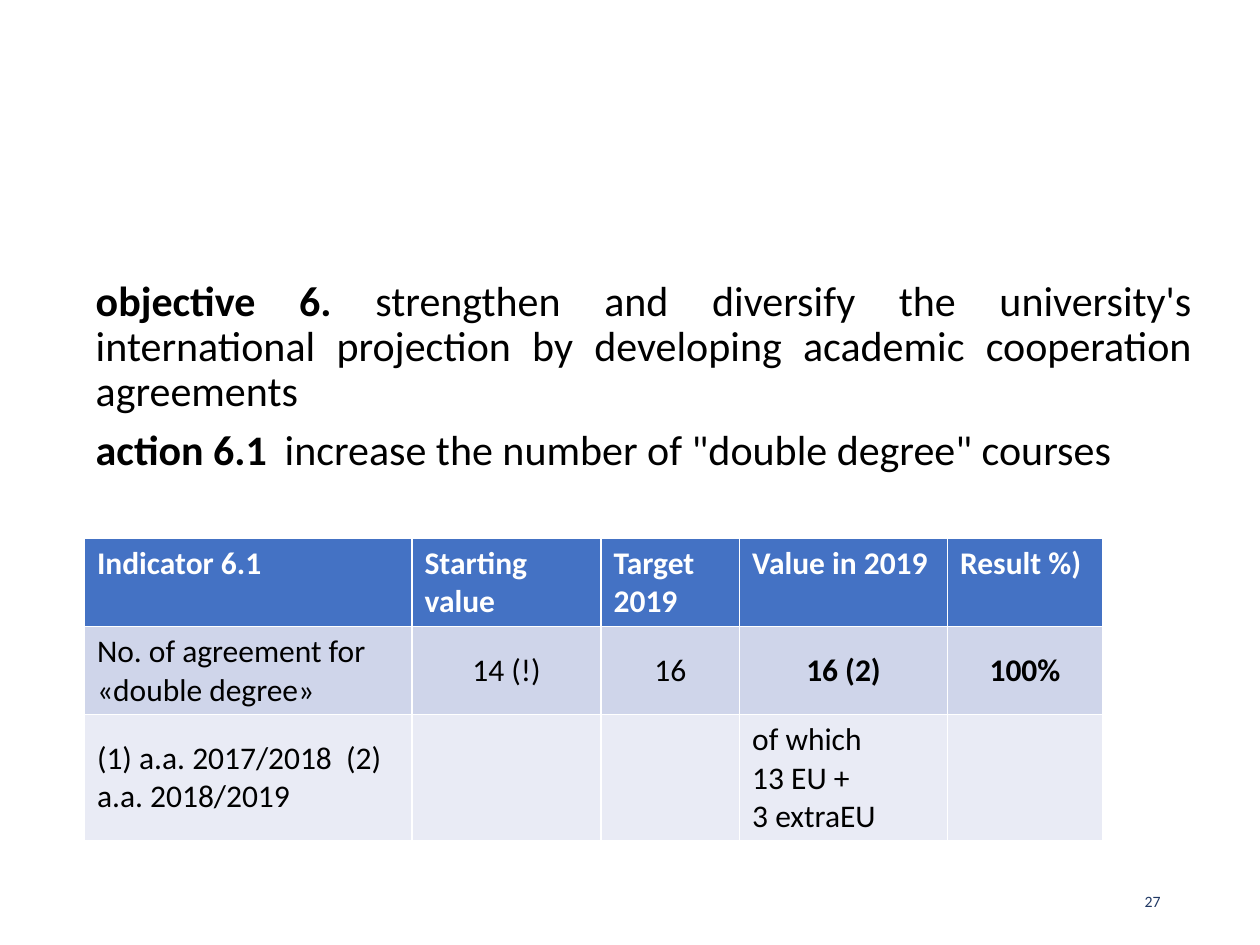
from lxml import etree
from pptx import Presentation
from pptx.dml.color import RGBColor
from pptx.enum.text import MSO_ANCHOR, MSO_AUTO_SIZE, PP_ALIGN
from pptx.oxml.ns import qn
from pptx.util import Inches, Pt

LEFT, CENTER, RIGHT, JUSTIFY = PP_ALIGN.LEFT, PP_ALIGN.CENTER, PP_ALIGN.RIGHT, PP_ALIGN.JUSTIFY
TOP, MIDDLE = MSO_ANCHOR.TOP, MSO_ANCHOR.MIDDLE
NO_AUTOFIT = MSO_AUTO_SIZE.NONE

BLACK = RGBColor(0x00, 0x00, 0x00)
WHITE = RGBColor(0xFF, 0xFF, 0xFF)
NAVY = RGBColor(0x20, 0x38, 0x64)
BLUE = RGBColor(0x44, 0x72, 0xC4)
BAND_DARK = RGBColor(0xCF, 0xD5, 0xEA)
BAND_LIGHT = RGBColor(0xE9, 0xEB, 0xF5)

OBJECTIVE = [
    ("objective 6.", " strengthen and diversify the university's international "
                     "projection by developing academic cooperation agreements"),
    ("action 6.1", "\tincrease the number of \"double degree\" courses"),
]
ROWS = [
    ["Indicator 6.1", "Starting value", "Target 2019", "Value in 2019", "Result %)"],
    ["No. of agreement for «double degree»", "14 (!)", "16", "16 (2)", "100%"],
    ["(1) a.a. 2017/2018  (2) a.a. 2018/2019", "", "", "of which\n13 EU +\n3 extraEU", ""],
]
COL_WIDTHS = [2.6, 1.5, 1.1, 1.65, 1.23]
ROW_HEIGHTS = [0.7, 0.7, 1.0]
ROW_FILLS = [BLUE, BAND_DARK, BAND_LIGHT]


def add_run(p, text, size=18, color=BLACK, bold=False, font="Calibri"):
    """Append a formatted run to a paragraph."""
    r = p.add_run()
    r.text = text
    r.font.name = font
    r.font.size = Pt(size)
    r.font.bold = bold
    r.font.color.rgb = color


class SlideBuilder:
    """Hold the current slide and add each kind of element to it."""

    def __init__(self, prs):
        """Add a slide with only its subtitle placeholder."""
        self.s = prs.slides.add_slide(prs.slide_layouts[0])
        title = self.s.shapes.title
        title.element.getparent().remove(title.element)

    def place(self, sp, left, top, width, height):
        """Move and size a shape given in inches."""
        sp.left, sp.top = Inches(left), Inches(top)
        sp.width, sp.height = Inches(width), Inches(height)

    def subtitle(self, items, box, tab):
        """Fill the subtitle with paragraphs of a bold lead and plain text."""
        sp = self.s.placeholders[1]
        self.place(sp, *box)
        tf = sp.text_frame
        tf.auto_size = NO_AUTOFIT
        tf.vertical_anchor = TOP
        for i, (lead, text) in enumerate(items):
            p = tf.paragraphs[0] if i == 0 else tf.add_paragraph()
            tabs = etree.SubElement(p._p.get_or_add_pPr(), qn("a:tabLst"))
            etree.SubElement(tabs, qn("a:tab"), pos=str(Inches(tab)), algn="l")
            p.alignment = JUSTIFY
            p.line_spacing = 0.9
            p.space_before = Pt(7.5 if i else 0)
            add_run(p, lead, size=24, bold=True)
            add_run(p, text, size=24)

    def table(self, rows, left, top):
        """Add the indicator table with a header and banded rows."""
        frame = self.s.shapes.add_table(
            len(rows), len(COL_WIDTHS), Inches(left), Inches(top),
            Inches(sum(COL_WIDTHS)), Inches(sum(ROW_HEIGHTS)))
        tbl = frame.table
        for col, width in zip(tbl.columns, COL_WIDTHS):
            col.width = Inches(width)
        for i, texts in enumerate(rows):
            tbl.rows[i].height = Inches(ROW_HEIGHTS[i])
            for j, text in enumerate(texts):
                self.cell(tbl.cell(i, j), text, ROW_FILLS[i],
                          anchor=TOP if i == 0 else MIDDLE,
                          align=CENTER if i == 1 and j else LEFT,
                          color=WHITE if i == 0 else BLACK,
                          bold=i == 0 or (i == 1 and j >= 3))

    def cell(self, cell, text, fill, anchor, align, **fmt):
        """Fill one table cell, one paragraph per line of text."""
        cell.fill.solid()
        cell.fill.fore_color.rgb = fill
        cell.vertical_anchor = anchor
        tf = cell.text_frame
        for i, line in enumerate(text.splitlines()):
            p = tf.paragraphs[0] if i == 0 else tf.add_paragraph()
            p.alignment = align
            add_run(p, line, **fmt)

    def page_number(self, text, box):
        """Add the right-aligned page number."""
        tf = self.s.shapes.add_textbox(*map(Inches, box)).text_frame
        tf.word_wrap = True
        tf.vertical_anchor = MIDDLE
        p = tf.paragraphs[0]
        p.alignment = RIGHT
        add_run(p, text, size=9, color=NAVY)


def main():
    """Build and save the slide."""
    prs = Presentation()
    prs.slide_width, prs.slide_height = Inches(10), Inches(7.5)
    slide = SlideBuilder(prs)
    slide.page_number("27", (7.06, 6.95, 2.25, 0.4))
    slide.subtitle(OBJECTIVE, (0.66, 2.17, 8.9, 1.81), tab=2.1)
    slide.table(ROWS, 0.67, 4.27)
    prs.save("out.pptx")


if __name__ == "__main__":
    main()
